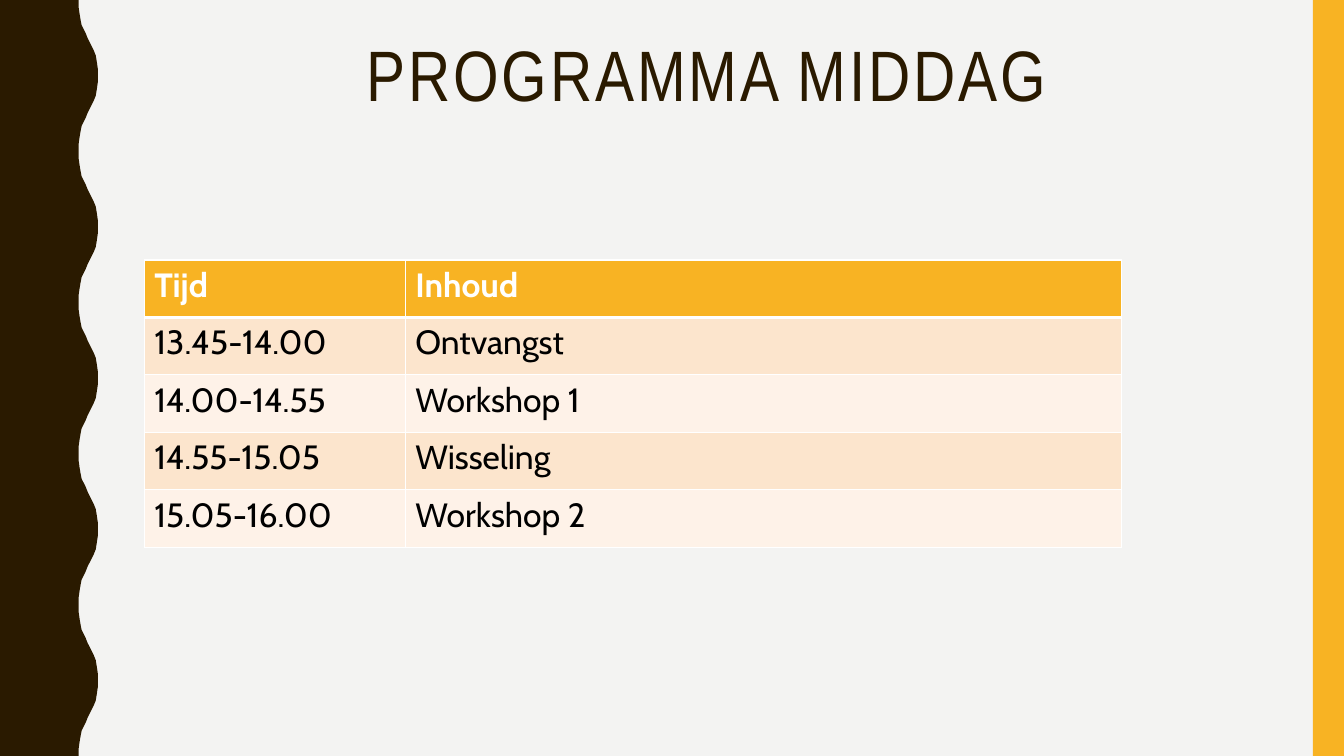
from lxml.etree import SubElement
from pptx import Presentation
from pptx.dml.color import RGBColor as Color
from pptx.enum.shapes import MSO_SHAPE as Shape
from pptx.enum.text import MSO_ANCHOR as Anchor
from pptx.oxml.ns import qn
from pptx.util import Inches, Pt

WIDTH, HEIGHT = 13.33, 7.5
COLORS = {
    "paper": "F3F3F2",
    "brown": "2A1A00",
    "amber": "F8B323",
    "peach": "FCE5CD",
    "cream": "FEF2E8",
    "white": "FFFFFF",
    "black": "000000",
}
PROGRAMME = [
    ("Tijd", "Inhoud"),
    ("13.45-14.00", "Ontvangst"),
    ("14.00-14.55", "Workshop 1"),
    ("14.55-15.05", "Wisseling"),
    ("15.05-16.00", "Workshop 2"),
]
# Outward half of one wave; the way back mirrors it
WAVE_PERIOD = 1.5
WAVE_OUT = [
    (0.78, 0), (0.78, 0.07), (0.79, 0.14), (0.8, 0.2), (0.81, 0.25),
    (0.83, 0.29), (0.85, 0.33), (0.87, 0.38), (0.89, 0.42), (0.91, 0.46),
    (0.93, 0.5), (0.95, 0.55), (0.96, 0.61), (0.97, 0.68), (0.97, 0.75),
]


class SlideBuilder:
    title_font = "Arial Narrow"
    body_font = "Cabin"

    def __init__(self, page):
        self.page = page

    def color(self, name):
        return Color.from_string(COLORS[name])

    def paint(self, target, name):
        target.fill.solid()
        target.fill.fore_color.rgb = self.color(name)

    def finish(self, shape, name):
        self.paint(shape, name)
        shape.line.fill.background()
        shape.shadow.inherit = False

    def style(self, span, font, size, name, bold=False):
        span.font.name = font
        span.font.size = Pt(size)
        span.font.bold = bold
        span.font.color.rgb = self.color(name)

    def bar(self, left, top, width, height, name):
        box = self.page.shapes.add_shape(
            Shape.RECTANGLE, Inches(left), Inches(top), Inches(width), Inches(height))
        self.finish(box, name)

    def outline(self, points, name):
        corners = [(Inches(x), Inches(y)) for x, y in points]
        builder = self.page.shapes.build_freeform(*corners[0])
        builder.add_line_segments(corners[1:], close=True)
        self.finish(builder.convert_to_shape(), name)

    def title(self, text, left, top, width, height):
        box = self.page.shapes.add_textbox(
            Inches(left), Inches(top), Inches(width), Inches(height))
        frame = box.text_frame
        frame.word_wrap = True
        frame.vertical_anchor = Anchor.TOP
        frame.text = text
        para = frame.paragraphs[0]
        para.line_spacing = 0.9
        span = para.runs[0]
        self.style(span, self.title_font, 51, "brown")
        span.font._element.set("spc", "200")

    def border(self, cell, side, points):
        properties = cell._tc.get_or_add_tcPr()
        line = SubElement(properties, qn(f"a:ln{side}"), w=str(Pt(points)))
        fill = SubElement(line, qn("a:solidFill"))
        SubElement(fill, qn("a:srgbClr"), val=COLORS["white"])

    def table(self, rows, left, top, column_widths, row_height):
        frame = self.page.shapes.add_table(
            len(rows), len(column_widths), Inches(left), Inches(top),
            Inches(sum(column_widths)), Inches(row_height * len(rows)))
        table = frame.table
        for column, width in zip(table.columns, column_widths):
            column.width = Inches(width)
        for index, texts in enumerate(rows):
            table.rows[index].height = Inches(row_height)
            header = index == 0
            background = "amber" if header else ("cream", "peach")[index % 2]
            for cell, text in zip(table.rows[index].cells, texts):
                # Thick rule between the header and the first row
                edges = {"L": 1, "R": 1, "T": 3 if index == 1 else 1, "B": 3 if header else 1}
                for side, points in edges.items():
                    self.border(cell, side, points)
                self.paint(cell, background)
                cell.text_frame.text = text
                self.style(cell.text_frame.paragraphs[0].runs[0], self.body_font, 24,
                           "white" if header else "black", bold=header)


def main():
    deck = Presentation()
    deck.slide_width = Inches(WIDTH)
    deck.slide_height = Inches(HEIGHT)
    page = deck.slides.add_slide(deck.slide_layouts[6])
    builder = SlideBuilder(page)
    builder.paint(page.background, "paper")

    # Wavy left edge
    wave_back = [(x, WAVE_PERIOD - y) for x, y in reversed(WAVE_OUT[:-1])]
    wave = WAVE_OUT + wave_back[:-1]
    edge = [(x, y + WAVE_PERIOD * turn)
            for turn in range(round(HEIGHT / WAVE_PERIOD)) for x, y in wave]
    builder.outline([(0, 0), *edge, (WAVE_OUT[0][0], HEIGHT), (0, HEIGHT)], "brown")

    # Right bar
    builder.bar(13.02, 0, 0.31, HEIGHT, "amber")

    # Title and programme
    builder.title("PROGRAMMA MIDDAG", 3.54, 0.35, 8.88, 1.45)
    builder.table(PROGRAMME, 1.43, 2.58, (2.59, 7.1), 0.57)

    deck.save("out.pptx")


if __name__ == "__main__":
    main()
